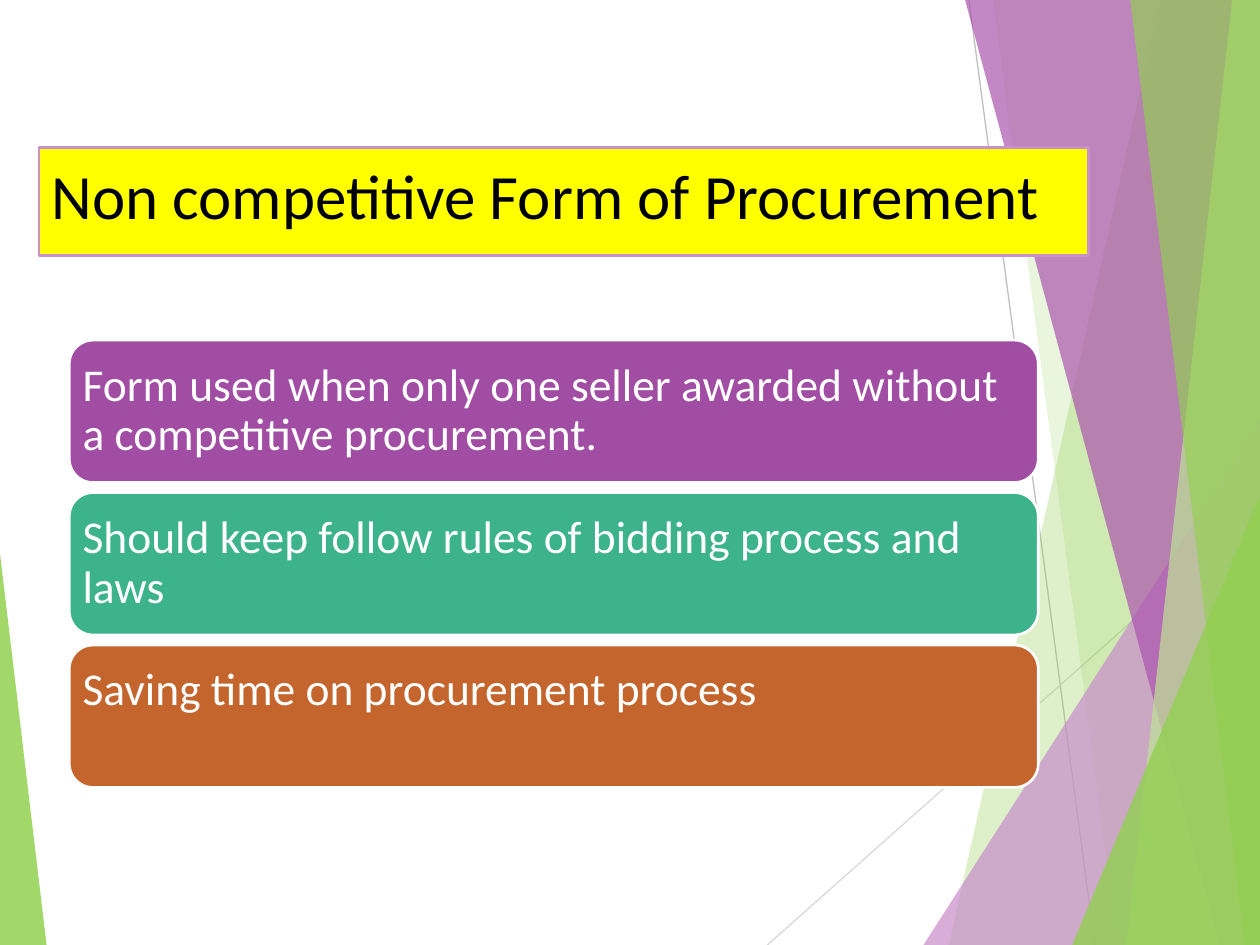
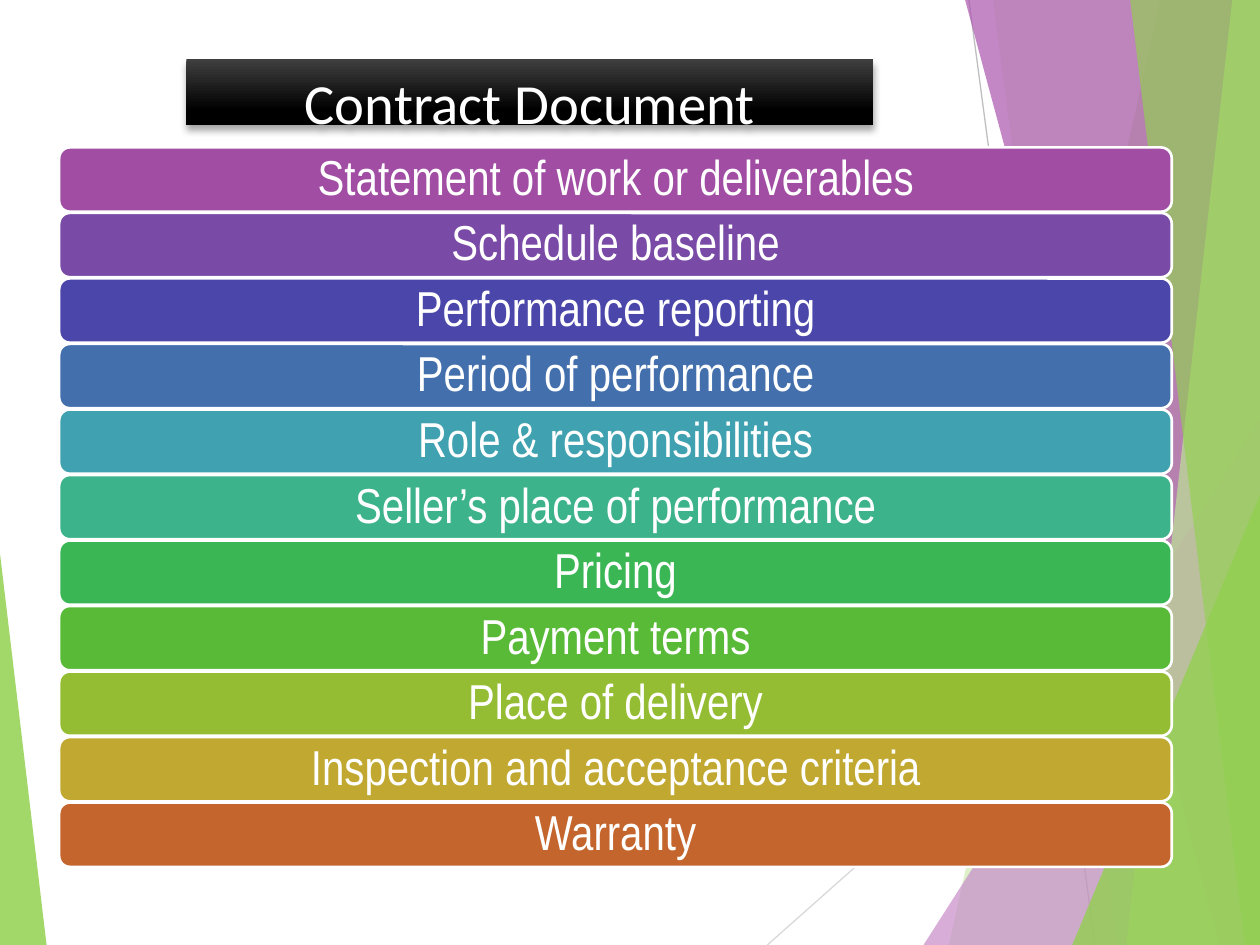
from lxml.etree import SubElement
from pptx import Presentation
from pptx.dml.color import RGBColor
from pptx.enum.shapes import MSO_CONNECTOR, MSO_SHAPE as SHAPE
from pptx.enum.text import MSO_ANCHOR as ANCHOR, PP_ALIGN as ALIGN
from pptx.oxml.ns import qn
from pptx.util import Inches, Pt

W, H = 10, 7.5
WHITE, GREEN, LILAC = "FFFFFF", "92D050", "C990CB"

LINES = [((7.69, 0), (8.69, H), "BFBFBF"), ((W, 4.03), (6.09, H), "D9D9D9")]
# kind, geometry, colour, opacity
FACETS = [
    ("band", (9.21, 7.53), GREEN, 30),
    ("band", (7.88, 8.87), GREEN, 20),
    ("triangle", (7.33, 3.33, W, 1), LILAC, 72),
    ("band", (7.66, 9.68), "AC55AF", 70),
    ("band", (9.78, 8.94), "BEE396", 70),
    ("band", (8.97, 9.88), GREEN, 65),
    ("triangle", (8.51, 3.93, W, 1), GREEN, 80),
    ("triangle", (0, 4.39, 0.37, 0), GREEN, 85),
]

SLIDES = [
    {
        "title": "Non competitive Form of Procurement",
        "title_box": (0.31, 1.17, 8.33, 0.86),
        "title_fill": "FFFF00", "title_line": LILAC,
        "title_font": {"size": 36, "color": "000000"}, "title_align": ALIGN.LEFT,
        "grid": {"left": 0.55, "top": 2.7, "width": 7.69, "height": 1.13, "pitch": 1.21},
        "font": {"size": 26, "name": "Calibri"},
        "align": ALIGN.LEFT, "inset": 0.05,
        "bars": [
            ("Form used when only one seller awarded without a competitive procurement.", "A04DA3", 0),
            ("Should keep follow rules of bidding process and laws", "3DB38C", 0),
            ("Saving time on procurement process", "C4652D", 0.4),
        ],
    },
    {
        "title": "Contract Document",
        "title_box": (1.48, 0.47, 5.45, 0.52),
        "title_fill": [(0, "3F3F3F"), (0.78, "000000")], "title_line": None,
        "title_font": {"size": 32.4, "color": WHITE}, "title_align": ALIGN.CENTER,
        "grid": {"left": 0.47, "top": 1.17, "width": 8.83, "height": 0.51, "pitch": 0.52},
        "font": {"size": 28, "name": "Arial Narrow"},
        "align": ALIGN.CENTER, "inset": 0,
        "bars": [
            ("Statement of work or deliverables", "A04DA3", 0),
            ("Schedule baseline", "794AA6", 0),
            ("Performance reporting", "4B47AA", 0),
            ("Period of performance", "436FAD", 0),
            ("Role & responsibilities", "40A2B0", 0),
            ("Seller’s place of performance", "3DB38C", 0),
            ("Pricing", "3AB754", 0),
            ("Payment terms", "58BA37", 0),
            ("Place of delivery", "95BD33", 0),
            ("Inspection and acceptance criteria", "C1A830", 0),
            ("Warranty", "C4652D", 0),
        ],
    },
]


def rgb(value):
    return RGBColor.from_string(value)


def paint(sp, color, line=None, opacity=100):
    sp.shadow.inherit = False
    if isinstance(color, list):
        sp.fill.gradient()
        sp.fill.gradient_angle = 270
        for stop, (position, shade) in zip(sp.fill.gradient_stops, color):
            stop.position = position
            stop.color.rgb = rgb(shade)
    else:
        sp.fill.solid()
        sp.fill.fore_color.rgb = rgb(color)
    if opacity < 100:
        clr = sp._element.spPr.find(qn("a:solidFill"))[0]
        SubElement(clr, qn("a:alpha"), val=str(opacity * 1000))
    if line:
        sp.line.color.rgb = rgb(line)
        sp.line.width = Pt(1.5)
    else:
        sp.line.fill.background()


def add_box(s, kind, box, *style):
    sp = s.shapes.add_shape(kind, *map(Inches, box))
    paint(sp, *style)
    return sp


def add_shadow(sp):
    effects = sp._element.spPr.find(qn("a:effectLst"))
    shadow = SubElement(effects, qn("a:outerShdw"), blurRad=str(Pt(4)), dist=str(Pt(3)),
                        dir="5400000", rotWithShape="0")
    clr = SubElement(shadow, qn("a:srgbClr"), val="000000")
    SubElement(clr, qn("a:alpha"), val="35000")


def write(sp, text, font, align, anchor, insets, spacing=1.0):
    tf = sp.text_frame
    tf.word_wrap = True
    tf.vertical_anchor = anchor
    for side, inset in zip(("left", "top", "right", "bottom"), insets):
        setattr(tf, f"margin_{side}", Inches(inset))
    p = tf.paragraphs[0]
    p.alignment = align
    p.line_spacing = spacing
    r = p.add_run()
    r.text = text
    r.font.color.rgb = rgb(font["color"])
    for key, value in {"name": font["name"], "size": Pt(font["size"])}.items():
        setattr(r.font, key, value)


def add_backdrop(s):
    for start, end, color in LINES:
        ln = s.shapes.add_connector(MSO_CONNECTOR.STRAIGHT, *map(Inches, start + end))
        ln.line.color.rgb = rgb(color)
        ln.line.width = Pt(0.75)
        SubElement(ln._element.spPr, qn("a:effectLst"))
    for kind, geometry, color, opacity in FACETS:
        if kind == "band":
            top, bottom = geometry
            fb = s.shapes.build_freeform(Inches(top), 0)
            fb.add_line_segments([(Inches(x), Inches(y)) for x, y in
                                  ((W, 0), (W, H), (bottom, H))])
            paint(fb.convert_to_shape(), color, None, opacity)
        else:
            left, top, right, apex = geometry
            sp = add_box(s, SHAPE.ISOSCELES_TRIANGLE, (left, top, right - left, H - top),
                         color, None, opacity)
            sp.adjustments[0] = apex


def add_title(s, d):
    sp = add_box(s, SHAPE.RECTANGLE, d["title_box"], d["title_fill"], d["title_line"])
    if not d["title_line"]:
        add_shadow(sp)
    write(sp, d["title"], {"name": "Calibri", **d["title_font"]}, d["title_align"],
          ANCHOR.TOP, (0.1, 0.07, 0.1, 0))


def add_bars(s, d):
    g, inset = d["grid"], d["inset"]
    for i, (text, color, lift) in enumerate(d["bars"]):
        box = g["left"], g["top"] + i * g["pitch"], g["width"], g["height"]
        sp = add_box(s, SHAPE.ROUNDED_RECTANGLE, box, color, WHITE)
        write(sp, text, {"color": WHITE, **d["font"]}, d["align"], ANCHOR.MIDDLE,
              (inset, inset, inset, inset + lift), 0.9)


def main():
    prs = Presentation()
    prs.slide_width, prs.slide_height = Inches(W), Inches(H)
    for d in SLIDES:
        s = prs.slides.add_slide(prs.slide_layouts[6])
        add_backdrop(s)
        add_title(s, d)
        add_bars(s, d)
    prs.save("out.pptx")


if __name__ == "__main__":
    main()
